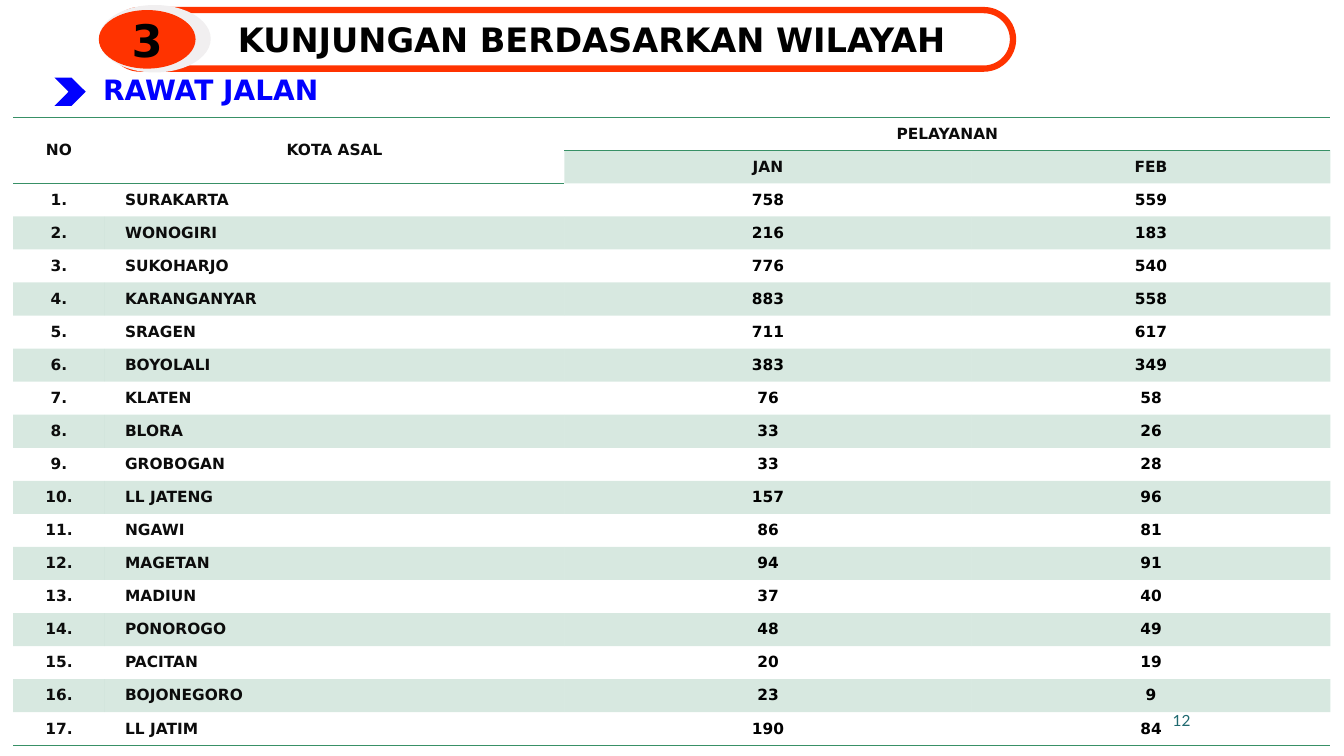
from lxml.etree import SubElement
from pptx import Presentation
from pptx.dml.color import RGBColor
from pptx.enum.shapes import MSO_SHAPE
from pptx.enum.text import MSO_ANCHOR, PP_ALIGN
from pptx.oxml import parse_xml
from pptx.oxml.ns import nsdecls, qn
from pptx.util import Pt

COLORS = {
    "red": "FF3300",
    "gray": "F1EFF0",
    "blue": "0000FF",
    "green": "389066",
    "teal": "1F696F",
    "black": "000000",
    "ink": "0C0C0C",
}
VISITS = [
    ("SURAKARTA", 758, 559), ("WONOGIRI", 216, 183), ("SUKOHARJO", 776, 540),
    ("KARANGANYAR", 883, 558), ("SRAGEN", 711, 617), ("BOYOLALI", 383, 349),
    ("KLATEN", 76, 58), ("BLORA", 33, 26), ("GROBOGAN", 33, 28),
    ("LL JATENG", 157, 96), ("NGAWI", 86, 81), ("MAGETAN", 94, 91),
    ("MADIUN", 37, 40), ("PONOROGO", 48, 49), ("PACITAN", 20, 19),
    ("BOJONEGORO", 23, 9), ("LL JATIM", 190, 84),
]
COLUMN_WIDTHS = [65.5, 328.3, 290.9, 256.3]
ROW_HEIGHT = 23.63
NO_STYLE = "{2D5ABB26-0587-4C30-8999-92F81FD0307C}"


def write(frame, text, size=11, color="ink", align=PP_ALIGN.CENTER,
          font="DejaVu Sans", bold=True, spacing=None):
    paragraph = frame.paragraphs[0]
    paragraph.alignment = align
    paragraph.line_spacing = spacing
    run = paragraph.add_run()
    run.text = text
    run.font.name = font
    run.font.size = Pt(size)
    run.font.bold = bold
    run.font.color.rgb = RGBColor.from_string(COLORS[color])


def add_plain_shape(kind, left, top, width, height, fill=None):
    """Add a preset shape without shadow or outline."""
    shape = slide.shapes.add_shape(kind, Pt(left), Pt(top), Pt(width), Pt(height))
    shape.shadow.inherit = False
    shape.line.fill.background()
    if fill:
        shape.fill.solid()
        shape.fill.fore_color.rgb = RGBColor.from_string(COLORS[fill])
    else:
        shape.fill.background()
    return shape


presentation = Presentation()
presentation.slide_width = Pt(960)
presentation.slide_height = Pt(540)
slide = presentation.slides.add_slide(presentation.slide_layouts[5])

# Visits table
rows = [("NO", "KOTA ASAL", "PELAYANAN", ""), ("", "", "JAN", "FEB")]
for number, (city, january, february) in enumerate(VISITS, 1):
    rows.append((f"{number}.", city, str(january), str(february)))
visits_frame = slide.shapes.add_table(
    len(rows), len(COLUMN_WIDTHS), Pt(9.4), Pt(83.7),
    Pt(sum(COLUMN_WIDTHS)), Pt(ROW_HEIGHT * len(rows)))
visits = visits_frame.table
visits.first_row = False
visits.horz_banding = False
visits_frame._element.find(".//" + qn("a:tableStyleId")).text = NO_STYLE
for column, width in zip(visits.columns, COLUMN_WIDTHS):
    column.width = Pt(width)

for r, row in enumerate(rows):
    visits.rows[r].height = Pt(ROW_HEIGHT)
    for c, text in enumerate(row):
        cell = visits.cell(r, c)
        is_count = r > 1 and c > 1
        cell.vertical_anchor = MSO_ANCHOR.MIDDLE
        cell.margin_left = cell.margin_right = Pt(0 if is_count else 14.4)
        cell.margin_top = cell.margin_bottom = Pt(0 if is_count else 5)
        if text:
            write(cell.text_frame, text, color="black" if is_count else "ink",
                  align=PP_ALIGN.LEFT if r > 1 and c == 1 else PP_ALIGN.CENTER)

        if r % 2 and (r > 1 or c > 1):
            cell.fill.solid()
            cell.fill.fore_color.rgb = RGBColor.from_string(COLORS["green"])
            tint = cell._tc.tcPr.find(".//" + qn("a:srgbClr"))
            SubElement(tint, qn("a:alpha"), val="20000")
        else:
            cell.fill.background()

        edges = []
        if r == 0:
            edges.append("lnT")
        if r in (0, len(rows) - 1) or (r == 1 and c < 2):
            edges.append("lnB")
        for position, edge in enumerate(edges):
            cell._tc.tcPr.insert(position, parse_xml(
                f'<a:{edge} {nsdecls("a")} w="{Pt(1)}"><a:solidFill>'
                f'<a:srgbClr val="{COLORS["green"]}"/></a:solidFill></a:{edge}>'))

visits.cell(0, 0).merge(visits.cell(1, 0))
visits.cell(0, 1).merge(visits.cell(1, 1))
visits.cell(0, 2).merge(visits.cell(0, 3))

# Numbered heading
heading_pill = add_plain_shape(MSO_SHAPE.ROUNDED_RECTANGLE, 79.2, 7.2, 644.4, 41.8)
heading_pill.adjustments[0] = 0.5
heading_pill.line.color.rgb = RGBColor.from_string(COLORS["red"])
heading_pill.line.width = Pt(4.5)
add_plain_shape(MSO_SHAPE.OVAL, 70.6, 3.6, 79.9, 48.2, "gray")
section_badge = add_plain_shape(MSO_SHAPE.OVAL, 70.6, 7.2, 69.1, 41.8, "red")
section_badge.text_frame.vertical_anchor = MSO_ANCHOR.MIDDLE
write(section_badge.text_frame, "3", size=32, color="black")

heading = slide.shapes.title
heading.left, heading.top, heading.width, heading.height = Pt(113), Pt(-7.9), Pt(619.2), Pt(54)
heading.text_frame.vertical_anchor = MSO_ANCHOR.BOTTOM
write(heading.text_frame, "KUNJUNGAN BERDASARKAN WILAYAH", size=24, color="black", spacing=0.9)

# Subheading
add_plain_shape(MSO_SHAPE.CHEVRON, 38.9, 55.4, 22.3, 20.2, "blue")
subheading = slide.shapes.add_textbox(Pt(66.5), Pt(48.2), Pt(178), Pt(31.7))
subheading.text_frame.word_wrap = False
write(subheading.text_frame, "RAWAT JALAN", size=20, color="blue", align=PP_ALIGN.LEFT)

# Page number
page_number = slide.shapes.add_textbox(Pt(633.6), Pt(500.4), Pt(223.9), Pt(28.8))
page_number.text_frame.word_wrap = True
page_number.text_frame.vertical_anchor = MSO_ANCHOR.MIDDLE
write(page_number.text_frame, "12", color="teal", align=PP_ALIGN.RIGHT, font="Lato", bold=False)

presentation.save("out.pptx")
